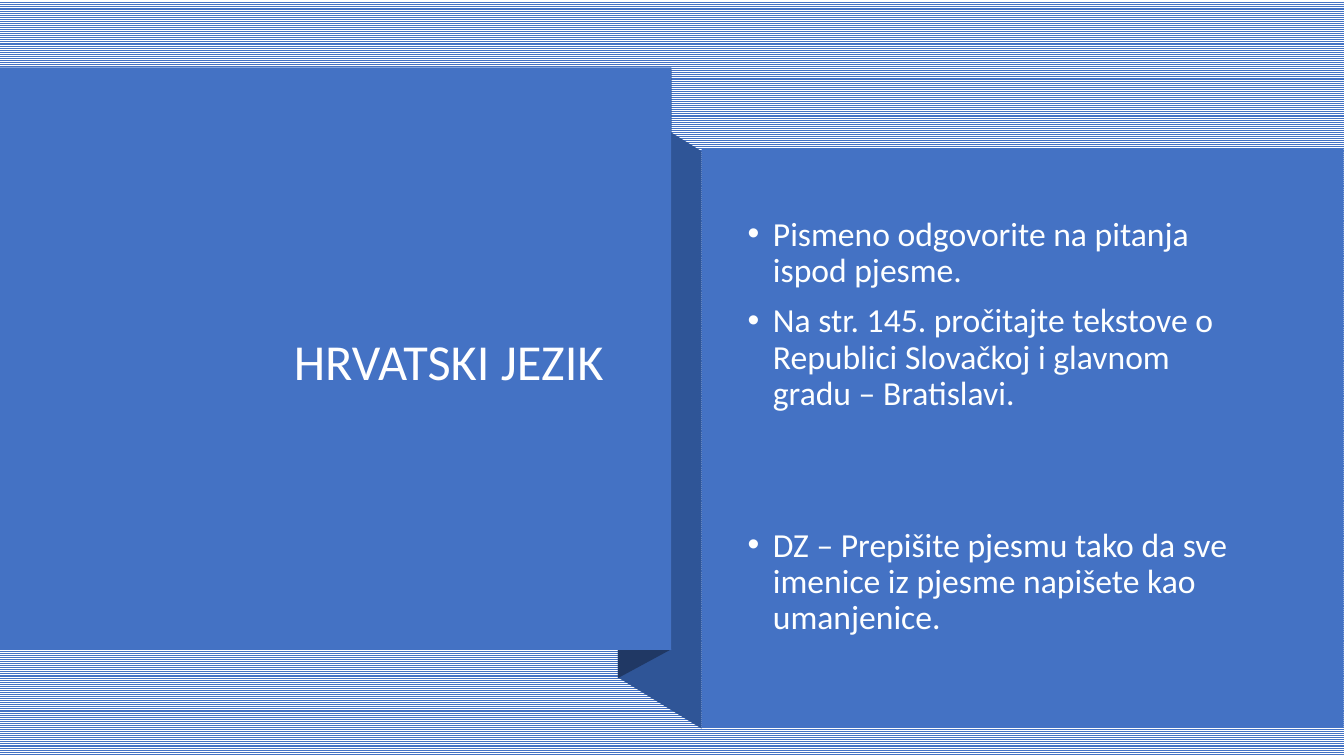
import dataclasses
import typing

import lxml.etree
import pptx
import pptx.dml.color
import pptx.enum.dml
import pptx.enum.shapes
import pptx.enum.text
import pptx.oxml.ns
import pptx.shapes.base
import pptx.slide
import pptx.util

Cm = pptx.util.Cm
Pt = pptx.util.Pt
RGBColor = pptx.dml.color.RGBColor
Alignment = pptx.enum.text.PP_ALIGN


@dataclasses.dataclass(frozen=True)
class Theme:
    panel: RGBColor = RGBColor.from_string("4472C4")
    fold: RGBColor = RGBColor.from_string("2F5597")
    fold_shade: RGBColor = RGBColor.from_string("203864")
    paper: RGBColor = RGBColor.from_string("FFFFFF")
    body_text: RGBColor = RGBColor.from_string("FEFFFF")
    font: str = "Calibri"
    title_size: int = 36
    body_size: int = 24
    line_spacing: float = 0.9
    bullet_indent: float = 0.64


class Frame(typing.NamedTuple):
    left: float
    top: float
    width: float
    height: float

    def lengths(self) -> list[pptx.util.Length]:
        return [Cm(value) for value in self]


class Fold(typing.NamedTuple):
    corners: list[tuple[float, float]]
    color: RGBColor


class Line(typing.NamedTuple):
    text: str
    space_before: float = 10
    bullet: bool = True


@dataclasses.dataclass(frozen=True)
class TextBlock:
    frame: Frame
    lines: list[Line]
    size: int
    color: RGBColor
    alignment: Alignment = Alignment.LEFT


THEME = Theme()

FOLDS = [
    Fold([(17.68, 18.36), (15.57, 17.07), (15.57, 2.51), (17.68, 3.81)], THEME.fold),
    Fold([(16.92, 16.36), (15.57, 17.09), (15.57, 2.49), (16.92, 1.75)], THEME.fold_shade),
]
TITLE_PANEL = Frame(0, 1.7, 16.92, 14.68)
BODY_PANEL = Frame(17.68, 3.76, 16.18, 14.58)

TITLE = TextBlock(
    Frame(2.41, 3.35, 13.06, 11.68),
    [Line("HRVATSKI JEZIK", 0, False)],
    THEME.title_size,
    THEME.paper,
    Alignment.RIGHT,
)
TASKS = TextBlock(
    Frame(18.59, 4.7, 13.06, 12.12),
    [
        Line("Pismeno odgovorite na pitanja ispod pjesme."),
        Line("Na str. 145. pročitajte tekstove o Republici Slovačkoj i glavnom gradu – Bratislavi."),
        Line("DZ – Prepišite pjesmu tako da sve imenice iz pjesme napišete kao umanjenice.", 82.5),
    ],
    THEME.body_size,
    THEME.body_text,
)


def paint(shape: pptx.shapes.base.BaseShape, color: RGBColor) -> None:
    shape.fill.solid()
    shape.fill.fore_color.rgb = color
    shape.line.fill.background()
    shape.shadow.inherit = False


def add_fold(page: pptx.slide.Slide, fold: Fold) -> None:
    start, *others = [(Cm(x), Cm(y)) for x, y in fold.corners]
    builder = page.shapes.build_freeform(*start)
    builder.add_line_segments(others, close=True)
    paint(builder.convert_to_shape(), fold.color)


def add_panel(page: pptx.slide.Slide, frame: Frame) -> None:
    rectangle = pptx.enum.shapes.MSO_SHAPE.RECTANGLE
    paint(page.shapes.add_shape(rectangle, *frame.lengths()), THEME.panel)


def add_text(page: pptx.slide.Slide, block: TextBlock) -> None:
    box = page.shapes.add_textbox(*block.frame.lengths())
    text_frame = box.text_frame
    text_frame.word_wrap = True
    text_frame.vertical_anchor = pptx.enum.text.MSO_ANCHOR.MIDDLE
    for index, line in enumerate(block.lines):
        para = text_frame.add_paragraph() if index else text_frame.paragraphs[0]
        para.text = line.text
        para.alignment = block.alignment
        para.line_spacing = THEME.line_spacing
        para.space_before = Pt(line.space_before)
        if line.bullet:
            properties = para._p.get_or_add_pPr()
            properties.set("marL", str(Cm(THEME.bullet_indent)))
            properties.set("indent", str(-Cm(THEME.bullet_indent)))
            for tag, key, value in (("a:buFont", "typeface", "Arial"), ("a:buChar", "char", "•")):
                lxml.etree.SubElement(properties, pptx.oxml.ns.qn(tag)).set(key, value)
        para.font.name = THEME.font
        para.font.size = Pt(block.size)
        para.font.color.rgb = block.color


def main() -> None:
    deck = pptx.Presentation()
    deck.slide_width, deck.slide_height = Cm(33.87), Cm(19.05)
    page = deck.slides.add_slide(deck.slide_layouts[6])

    backdrop = page.background.fill
    backdrop.patterned()
    backdrop.pattern = pptx.enum.dml.MSO_PATTERN.LIGHT_HORIZONTAL
    backdrop.fore_color.rgb = THEME.panel
    backdrop.back_color.rgb = THEME.paper

    for fold in FOLDS:
        add_fold(page, fold)
    for panel, block in ((TITLE_PANEL, TITLE), (BODY_PANEL, TASKS)):
        add_panel(page, panel)
        add_text(page, block)

    deck.save("out.pptx")


if __name__ == "__main__":
    main()
